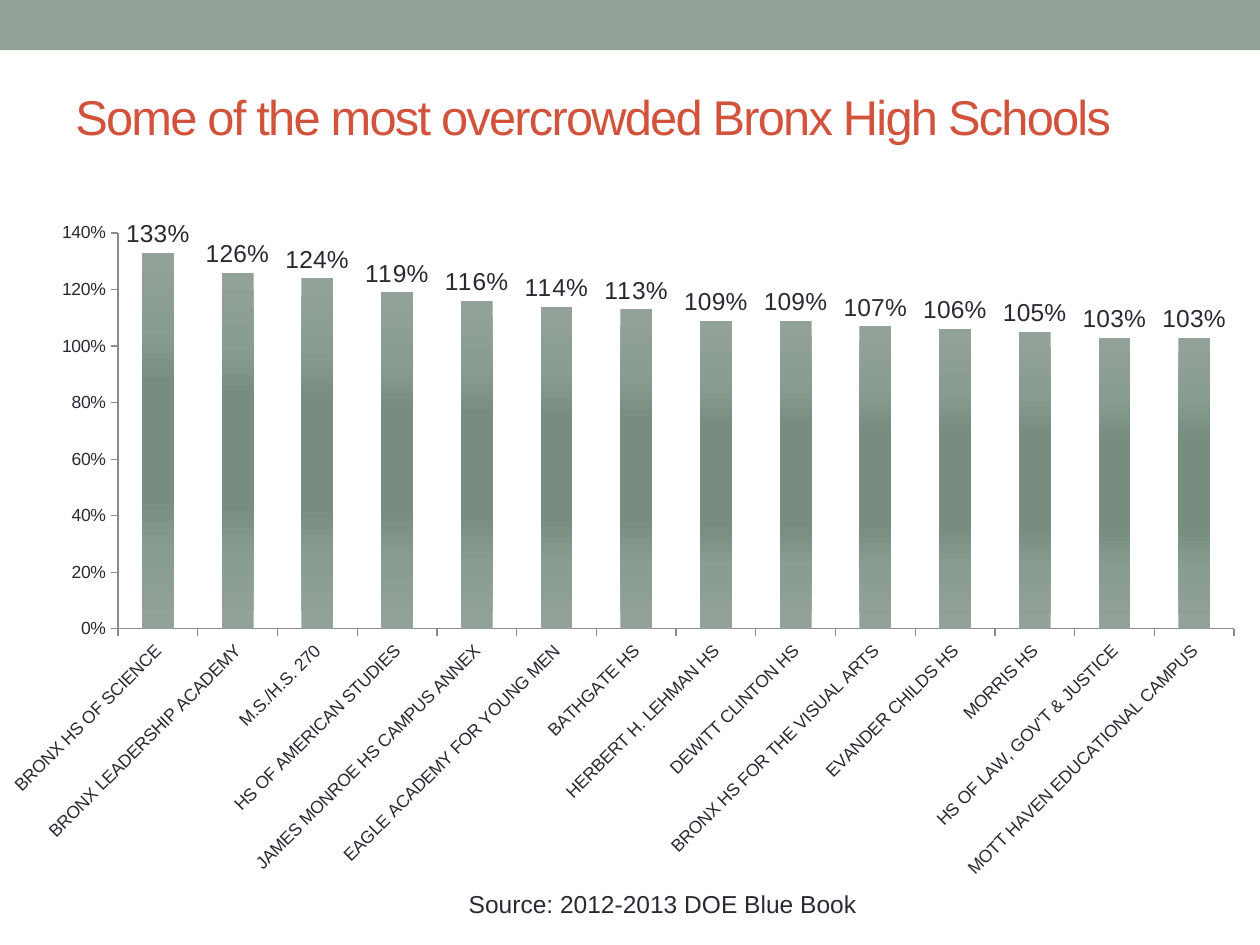
"""Build a slide charting the most overcrowded Bronx high schools."""
from dataclasses import dataclass

from pptx import Presentation
from pptx.chart.data import CategoryChartData
from pptx.dml.color import RGBColor
from pptx.enum.chart import XL_CHART_TYPE, XL_LABEL_POSITION, XL_TICK_MARK
from pptx.enum.shapes import MSO_SHAPE
from pptx.enum.text import MSO_ANCHOR, PP_ALIGN
from pptx.oxml import parse_xml
from pptx.oxml.ns import nsdecls
from pptx.util import Cm, Pt


@dataclass(frozen=True)
class Theme:
    font: str = "Arial"
    sage: str = "93A299"
    sage_mid: str = "8A9D92"
    sage_dark: str = "788C80"
    accent: str = "D2533C"
    ink: str = "292934"
    axis: str = "8B8B8B"
    title_size: float = 27.9
    body_size: float = 14
    axis_size: float = 10


theme = Theme()


def style_font(font, size, color):
    font.name = theme.font
    font.size = Pt(size)
    font.color.rgb = RGBColor.from_string(color)


def add_text(slide, text, box, size, color):
    shape = slide.shapes.add_textbox(*[Cm(length) for length in box])
    text_frame = shape.text_frame
    text_frame.word_wrap = True
    text_frame.text = text
    style_font(text_frame.paragraphs[0].runs[0].font, size, color)
    return text_frame


presentation = Presentation()
presentation.slide_width = Cm(25.4)
presentation.slide_height = Cm(19.05)
slide = presentation.slides.add_slide(presentation.slide_layouts[6])

band = slide.shapes.add_shape(MSO_SHAPE.RECTANGLE, Cm(0), Cm(0), Cm(25.4), Cm(1.01))
band.shadow.inherit = False
band.fill.solid()
band.fill.fore_color.rgb = RGBColor.from_string(theme.sage)
band.line.fill.background()

title = add_text(slide, "Some of the most overcrowded Bronx High Schools",
                 (1.27, 1.47, 22.86, 2.74), theme.title_size, theme.accent)
title.vertical_anchor = MSO_ANCHOR.TOP
title.margin_top = Cm(0.28)
title.paragraphs[0].runs[0].font._element.set("spc", "-100")

source = add_text(slide, "Source: 2012-2013 DOE Blue Book",
                  (1.32, 17.8, 24.08, 0.86), theme.body_size, theme.ink)
source.paragraphs[0].alignment = PP_ALIGN.CENTER

utilization = {
    "BRONX HS OF SCIENCE": 1.33,
    "BRONX LEADERSHIP ACADEMY": 1.26,
    "M.S./H.S. 270": 1.24,
    "HS OF AMERICAN STUDIES": 1.19,
    "JAMES MONROE HS CAMPUS ANNEX": 1.16,
    "EAGLE ACADEMY FOR YOUNG MEN": 1.14,
    "BATHGATE HS": 1.13,
    "HERBERT H. LEHMAN HS": 1.09,
    "DEWITT CLINTON HS": 1.09,
    "BRONX HS FOR THE VISUAL ARTS": 1.07,
    "EVANDER CHILDS HS": 1.06,
    "MORRIS HS": 1.05,
    "HS OF LAW, GOV'T & JUSTICE": 1.03,
    "MOTT HAVEN EDUCATIONAL CAMPUS": 1.03,
}
chart_data = CategoryChartData(number_format="0%")
chart_data.categories = list(utilization)
chart_data.add_series("Series 1", list(utilization.values()))
chart_width, chart_height = Cm(25.68), Cm(13.77)
chart = slide.shapes.add_chart(XL_CHART_TYPE.COLUMN_CLUSTERED, Cm(-0.28), Cm(4.24),
                               chart_width, chart_height, chart_data).chart
chart.has_legend = False
chart.has_title = False
style_font(chart.font, theme.axis_size, theme.ink)

for axis in (chart.category_axis, chart.value_axis):
    axis.has_major_gridlines = False
    axis.major_tick_mark = XL_TICK_MARK.OUTSIDE
    axis.minor_tick_mark = XL_TICK_MARK.NONE
    axis.format.line.color.rgb = RGBColor.from_string(theme.axis)
    axis.format.line.width = Pt(0.75)
    style_font(axis.tick_labels.font, theme.axis_size, theme.ink)
chart.value_axis.minimum_scale = 0
chart.value_axis.maximum_scale = 1.4
chart.value_axis.major_unit = 0.2
chart.value_axis.tick_labels.number_format = "0%"
chart.value_axis.tick_labels.number_format_is_linked = False
chart.element.xpath(".//c:catAx/c:txPr/a:bodyPr")[0].set("rot", "-2700000")

plot = chart.plots[0]
plot.gap_width = 150
plot.vary_by_categories = False
plot.has_data_labels = True
labels = plot.data_labels
labels.show_value = True
labels.number_format = "0%"
labels.number_format_is_linked = False
labels.position = XL_LABEL_POSITION.OUTSIDE_END
style_font(labels.font, theme.body_size, theme.ink)

fill = plot.series[0].format.fill
fill.gradient()
fill.gradient_angle = 270
stops = ((0, theme.sage), (20, theme.sage_mid), (35, theme.sage_dark),
         (65, theme.sage_dark), (80, theme.sage_mid), (100, theme.sage))
stop_list = chart.element.xpath(".//c:ser/c:spPr/a:gradFill/a:gsLst")[0]
for stop in list(stop_list):
    stop_list.remove(stop)
for position, color in stops:
    stop_list.append(parse_xml(
        f'<a:gs {nsdecls("a")} pos="{position * 1000}"><a:srgbClr val="{color}"/></a:gs>'))

plot_area = chart.element.xpath(".//c:plotArea")[0]
for layout in plot_area.xpath("c:layout"):
    plot_area.remove(layout)
frame = {"x": Cm(2.66) / chart_width, "y": Cm(0.46) / chart_height,
         "w": Cm(22.5) / chart_width, "h": Cm(7.98) / chart_height}
modes = '<c:layoutTarget val="inner"/><c:xMode val="edge"/><c:yMode val="edge"/>'
sizes = "".join(f'<c:{name} val="{value}"/>' for name, value in frame.items())
plot_area.insert(0, parse_xml(
    f'<c:layout {nsdecls("c")}><c:manualLayout>{modes}{sizes}</c:manualLayout></c:layout>'))

presentation.save("out.pptx")
